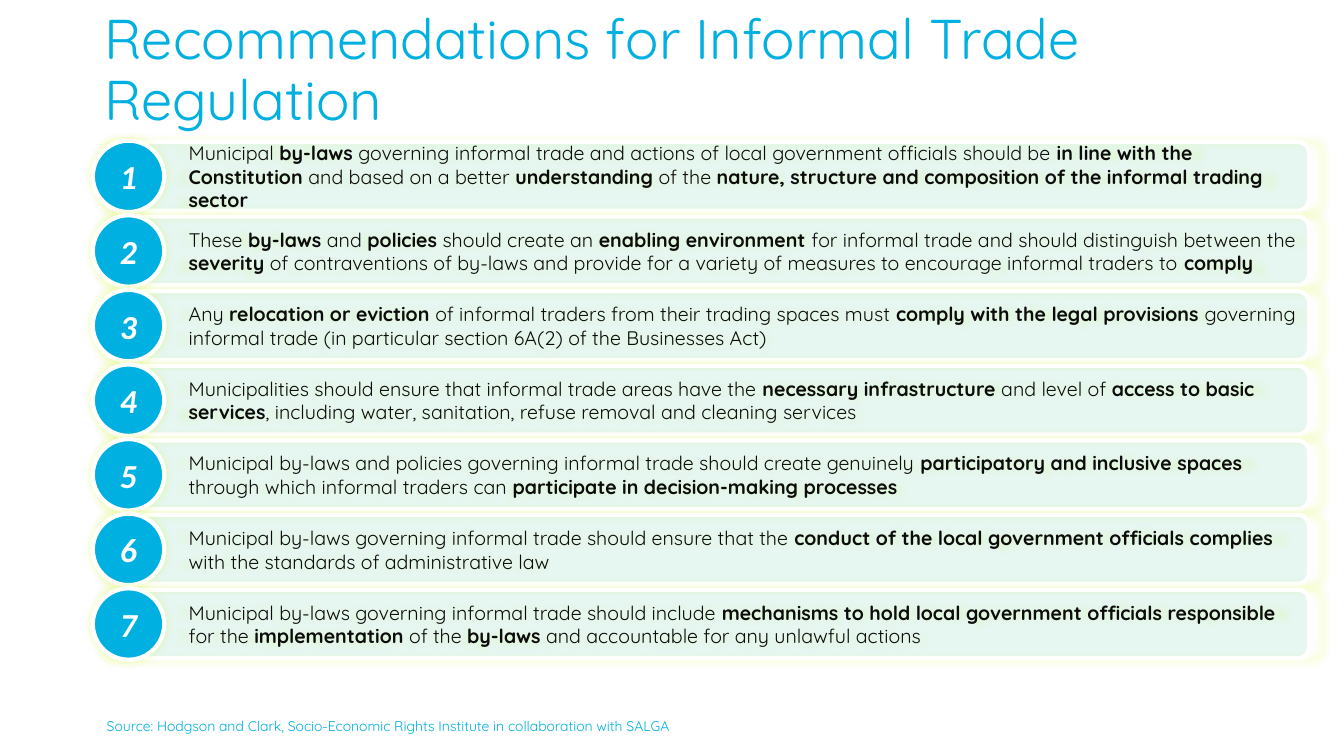
from dataclasses import dataclass

from lxml import etree
from pptx import Presentation
from pptx.dml.color import RGBColor
from pptx.enum.shapes import MSO_SHAPE
from pptx.enum.text import MSO_ANCHOR, PP_ALIGN
from pptx.oxml.ns import qn
from pptx.util import Cm, Pt

ROUNDED, OVAL = MSO_SHAPE.ROUNDED_RECTANGLE, MSO_SHAPE.OVAL
TOP, MIDDLE = MSO_ANCHOR.TOP, MSO_ANCHOR.MIDDLE
LEFT, CENTER = PP_ALIGN.LEFT, PP_ALIGN.CENTER

TITLE = "Recommendations for Informal Trade Regulation"
SOURCE = ("Source: Hodgson and Clark, Socio-Economic Rights Institute "
          "in collaboration with SALGA")
# Text between ** marks is bold.
RECOMMENDATIONS = [
    "Municipal **by-laws** governing informal trade and actions of local government "
    "officials should be **in line with the Constitution **and based on a better "
    "**understanding** of the **nature, structure and composition of the informal "
    "trading sector**",
    "These **by-laws** and **policies** should create an **enabling environment **for "
    "informal trade and should distinguish between the **severity** of contraventions "
    "of by-laws and provide for a variety of measures to encourage informal traders "
    "to **comply**",
    "Any **relocation or eviction **of informal traders from their trading spaces must "
    "**comply with the legal provisions **governing informal trade (in particular "
    "section 6A(2) of the Businesses Act)",
    "Municipalities should ensure that informal trade areas have the **necessary "
    "infrastructure** and level of **access to basic services**, including water, "
    "sanitation, refuse removal and cleaning services",
    "Municipal by-laws and policies governing informal trade should create genuinely "
    "**participatory and inclusive spaces **through which informal traders can "
    "**participate in decision-making processes**",
    "Municipal by-laws governing informal trade should ensure that the **conduct of the "
    "local government officials complies **with the standards of administrative law",
    "Municipal by-laws governing informal trade should include **mechanisms to hold "
    "local government officials responsible** for the **implementation** of the "
    "**by-laws** and accountable for any unlawful actions",
]

BAR_LEFT, BAR_TOP, BAR_WIDTH, BAR_HEIGHT = 2.87, 3.58, 30.12, 1.73
BADGE_LEFT, BADGE_SIZE = 2.34, 1.8
ROW_PITCH = 1.88


@dataclass(frozen=True)
class Theme:
    accent: str = "00B0E1"
    bar: str = "00A79D"
    bar_alpha: int = 9
    glow: str = "CAF906"
    glow_alpha: int = 20
    white: str = "FFFFFF"
    ink: str = "0C0C0C"
    text_font: str = "Quicksand"
    number_font: str = "Calibri"
    title_size: int = 40
    number_size: int = 24
    body_size: int = 14
    source_size: int = 10


class SlideBuilder:
    def __init__(self, slide, theme):
        self.s = slide
        self.theme = theme

    def set_frame(self, sp, insets, anchor):
        """Wrap the text; insets are left, top, right, bottom in cm."""
        tf = sp.text_frame
        tf.word_wrap = True
        tf.vertical_anchor = anchor
        tf.margin_left, tf.margin_top, tf.margin_right, tf.margin_bottom = map(Cm, insets)
        return tf.paragraphs[0]

    def style_run(self, r, font, size, color, bold=False, italic=False):
        r.font.name, r.font.size = font, Pt(size)
        r.font.bold, r.font.italic = bold, italic
        r.font.color.rgb = RGBColor.from_string(color)

    def set_alpha(self, color_element, percent):
        etree.SubElement(color_element, qn("a:alpha"), val=str(percent * 1000))

    def add_glow(self, sp):
        """Give the shape a slightly enlarged, centred soft shadow."""
        sp.shadow.inherit = False
        effects = sp._element.spPr.find(qn("a:effectLst"))
        shadow = etree.SubElement(effects, qn("a:outerShdw"), blurRad=str(Pt(5)),
                                  sx="102000", sy="102000", algn="ctr",
                                  rotWithShape="0")
        color = etree.SubElement(shadow, qn("a:srgbClr"), val=self.theme.glow)
        self.set_alpha(color, self.theme.glow_alpha)

    def add_outlined_shape(self, kind, left, top, width, height, color):
        sp = self.s.shapes.add_shape(kind, Cm(left), Cm(top), Cm(width), Cm(height))
        sp.fill.solid()
        sp.fill.fore_color.rgb = RGBColor.from_string(color)
        sp.line.color.rgb = RGBColor.from_string(self.theme.white)
        sp.line.width = Pt(3)
        self.add_glow(sp)
        return sp

    def add_text(self, text, left, top, width, height, size, anchor=TOP, inset=0.3,
                 spacing=1.0):
        sp = self.s.shapes.add_textbox(Cm(left), Cm(top), Cm(width), Cm(height))
        p = self.set_frame(sp, (inset, 0.13, inset, 0.13), anchor)
        p.text = text
        p.line_spacing = spacing
        self.style_run(p.runs[0], self.theme.text_font, size, self.theme.accent)

    def add_bar(self, text, top):
        t = self.theme
        sp = self.add_outlined_shape(ROUNDED, BAR_LEFT, top, BAR_WIDTH, BAR_HEIGHT, t.bar)
        fill_color = sp._element.spPr.find(qn("a:solidFill")).find(qn("a:srgbClr"))
        self.set_alpha(fill_color, t.bar_alpha)
        p = self.set_frame(sp, (1.8, 0.13, 0.2, 0.13), MIDDLE)
        p.alignment = LEFT
        for i, part in enumerate(text.split("**")):
            if part:
                r = p.add_run()
                r.text = part
                self.style_run(r, t.text_font, t.body_size, t.ink, bold=i % 2 == 1)

    def add_badge(self, number, top):
        t = self.theme
        sp = self.add_outlined_shape(OVAL, BADGE_LEFT, top, BADGE_SIZE, BADGE_SIZE, t.accent)
        p = self.set_frame(sp, (0, 0.13, 0, 0.13), MIDDLE)
        p.text = str(number)
        p.alignment = CENTER
        self.style_run(p.runs[0], t.number_font, t.number_size, t.white,
                       bold=True, italic=True)


def main():
    prs = Presentation()
    prs.slide_width, prs.slide_height = Cm(33.87), Cm(19.05)
    theme = Theme()
    builder = SlideBuilder(prs.slides.add_slide(prs.slide_layouts[6]), theme)

    builder.add_text(TITLE, 2.39, 0.3, 31.88, 3.02, theme.title_size,
                     anchor=MIDDLE, inset=0.25, spacing=0.9)
    for i, text in enumerate(RECOMMENDATIONS):
        top = BAR_TOP + i * ROW_PITCH
        builder.add_bar(text, top)
        builder.add_badge(i + 1, top + (BAR_HEIGHT - BADGE_SIZE) / 2)
    builder.add_text(SOURCE, 2.39, 17.96, 17.7, 0.86, theme.source_size)

    prs.save("out.pptx")


if __name__ == "__main__":
    main()
